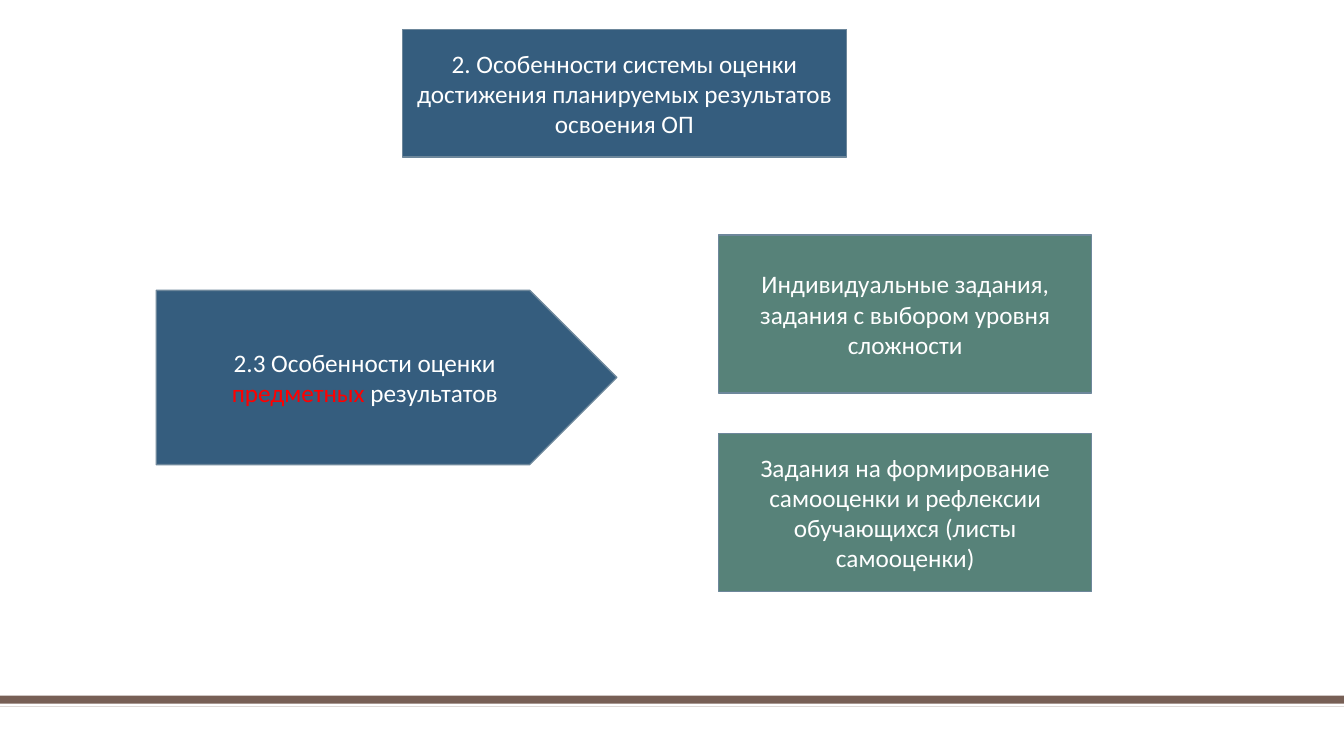
"""Build the slide on assessing subject results."""
from dataclasses import dataclass

from pptx import Presentation
from pptx.dml.color import RGBColor
from pptx.enum.shapes import MSO_SHAPE
from pptx.enum.text import MSO_ANCHOR, MSO_AUTO_SIZE, PP_ALIGN
from pptx.shapes.autoshape import Shape
from pptx.slide import Slide
from pptx.util import Pt

RECT, PENTAGON = MSO_SHAPE.RECTANGLE, MSO_SHAPE.PENTAGON
MIDDLE, CENTER, NO_FIT = MSO_ANCHOR.MIDDLE, PP_ALIGN.CENTER, MSO_AUTO_SIZE.NONE

COLORS = {
    "blue": "355D7E",
    "green": "578279",
    "outline": "6D879B",
    "brown": "775F55",
    "white": "FFFFFF",
    "red": "FF0000",
}
FRAME_FORMAT = {"word_wrap": True, "auto_size": NO_FIT, "vertical_anchor": MIDDLE}
FONT_FORMAT = {"name": "Calibri", "size": Pt(18)}

TASK_TOP, TASK_PITCH = 167.8, 141.8
TASKS = (
    "Индивидуальные задания, задания с выбором уровня сложности",
    "Задания на формирование самооценки и рефлексии обучающихся (листы самооценки)",
)


@dataclass(frozen=True)
class Bar:
    """Plain strip across the foot of the slide."""

    top: float
    height: float
    color: str


@dataclass(frozen=True)
class Box:
    """Outlined block with centred text given as (text, colour) runs."""

    left: float
    top: float
    width: float
    height: float
    color: str
    runs: tuple[tuple[str, str], ...]
    kind: MSO_SHAPE = RECT


BARS = (Bar(496.8, 7.9, "brown"), Bar(502.6, 2.1, "white"))
HEADING = Box(287.3, 20.9, 317.5, 91.4, "blue", ((
    "2. Особенности системы оценки достижения планируемых результатов освоения ОП",
    "white"),))
BOXES = (
    Box(111.6, 207.4, 329, 124.5, "blue", (
        ("2.3 Особенности оценки ", "white"),
        ("предметных ", "red"),
        ("результатов", "white"),
    ), PENTAGON),
    *(Box(513.4, TASK_TOP + i * TASK_PITCH, 266.4, 113, "green", ((task, "white"),))
      for i, task in enumerate(TASKS)),
)


def rgb(name: str) -> RGBColor:
    """Return the named colour."""
    return RGBColor.from_string(COLORS[name])


def set_fill(sp: Shape, color: str) -> None:
    """Give a shape a solid fill."""
    sp.fill.solid()
    sp.fill.fore_color.rgb = rgb(color)


def format_box(sp: Shape, box: Box) -> None:
    """Apply fill, outline and text to a shape."""
    set_fill(sp, box.color)
    sp.line.color.rgb = rgb("outline")
    sp.line.width = Pt(1)
    tf = sp.text_frame
    for key, value in FRAME_FORMAT.items():
        setattr(tf, key, value)
    p = tf.paragraphs[0]
    p.alignment = CENTER
    for text, color in box.runs:
        r = p.add_run()
        r.text = text
        r.font.color.rgb = rgb(color)
        for key, value in FONT_FORMAT.items():
            setattr(r.font, key, value)


def add_bar(s: Slide, bar: Bar, width: int) -> None:
    """Draw a strip without outline."""
    sp = s.shapes.add_shape(RECT, 0, Pt(bar.top), width, Pt(bar.height))
    sp.shadow.inherit = False
    set_fill(sp, bar.color)
    sp.line.fill.background()


def add_box(s: Slide, box: Box) -> None:
    """Draw a block of the diagram."""
    sp = s.shapes.add_shape(
        box.kind, Pt(box.left), Pt(box.top), Pt(box.width), Pt(box.height))
    sp.shadow.inherit = False
    format_box(sp, box)


def place_title(s: Slide, box: Box) -> None:
    """Move and format the title placeholder."""
    title = s.shapes.title
    for key in ("left", "top", "width", "height"):
        setattr(title, key, Pt(getattr(box, key)))
    format_box(title, box)


def main() -> None:
    """Build and save the presentation."""
    prs = Presentation()
    prs.slide_width, prs.slide_height = Pt(960), Pt(540)
    s = prs.slides.add_slide(prs.slide_layouts.get_by_name("Title Only"))
    place_title(s, HEADING)
    for bar in BARS:
        add_bar(s, bar, prs.slide_width)
    for box in BOXES:
        add_box(s, box)
    prs.save("out.pptx")


if __name__ == "__main__":
    main()
